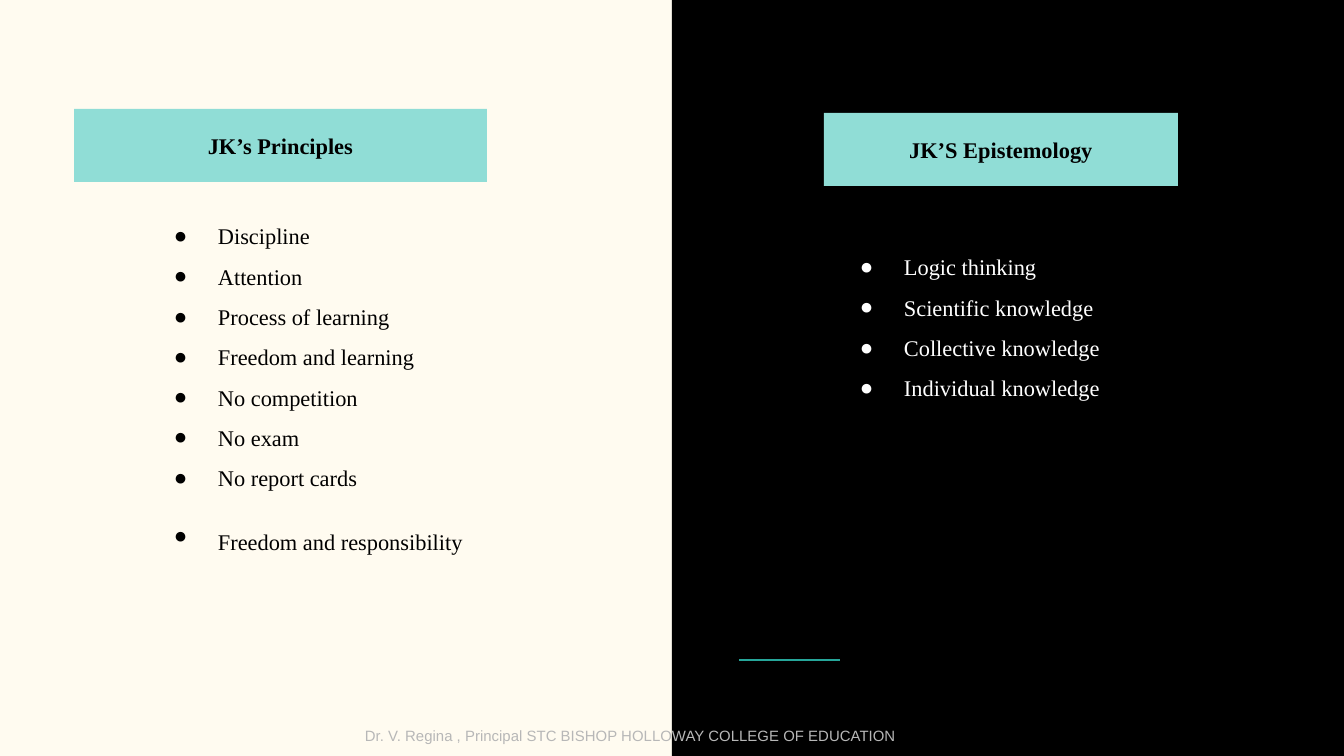
import pptx
import pptx.util
import pptx.dml.color
import pptx.enum.shapes
import pptx.enum.text
import pptx.oxml
import pptx.oxml.ns

PX = 914400 / 134.4
COLORS = {
    "cream": "FFFBF0",
    "black": "000000",
    "white": "FFFFFF",
    "mint": "90DDD6",
    "teal": "26A69A",
    "grey": "B7B7B7",
}
SERIF = "Times New Roman"
RECT = pptx.enum.shapes.MSO_SHAPE.RECTANGLE
ALIGN = pptx.enum.text.PP_ALIGN
ANCHOR = pptx.enum.text.MSO_ANCHOR


def px(*lengths):
    return [pptx.util.Emu(round(n * PX)) for n in lengths]


def add_text(p, text, size=12, font=SERIF, color="black", bold=False,
             align=None, bullet=False):
    r = p.add_run()
    r.text = text
    r.font.size = pptx.util.Pt(size)
    r.font.name = font
    r.font.bold = bold
    r.font.color.rgb = pptx.dml.color.RGBColor.from_string(COLORS[color])
    if align is not None:
        p.alignment = align
    if bullet:
        p.line_spacing = 1.5
        pPr = p._p.get_or_add_pPr()
        pPr.set("marL", str(px(67)[0]))
        pPr.set("indent", str(px(-44)[0]))
        ns = pptx.oxml.ns.nsdecls("a")
        for xml in (
            f'<a:buClr {ns}><a:srgbClr val="{COLORS[color]}"/></a:buClr>',
            f'<a:buFont {ns} typeface="{SERIF}"/>',
            f'<a:buChar {ns} char="●"/>',
        ):
            pPr.append(pptx.oxml.parse_xml(xml))


prs = pptx.Presentation()
prs.slide_width, prs.slide_height = px(1344, 756)
s = prs.slides.add_slide(prs.slide_layouts[6])

# Background
s.background.fill.solid()
s.background.fill.fore_color.rgb = pptx.dml.color.RGBColor.from_string(COLORS["cream"])

# Right panel and heading bars
for box, fill, heading in [
    ((672, 0, 672, 756), "black", None),
    ((824, 113, 354, 73), "mint", "JK’S Epistemology"),
    ((74, 109, 413, 73), "mint", "JK’s Principles"),
]:
    sp = s.shapes.add_shape(RECT, *px(*box))
    sp.shadow.inherit = False
    sp.fill.solid()
    sp.fill.fore_color.rgb = pptx.dml.color.RGBColor.from_string(COLORS[fill])
    sp.line.fill.background()
    if heading:
        sp.text_frame.vertical_anchor = ANCHOR.MIDDLE
        add_text(sp.text_frame.paragraphs[0], heading, bold=True, align=ALIGN.CENTER)

# Accent line
x1, y1, x2, y2 = px(739, 660, 840, 660)
line = s.shapes.add_connector(pptx.enum.shapes.MSO_CONNECTOR.STRAIGHT, x1, y1, x2, y2)
line.line.color.rgb = pptx.dml.color.RGBColor.from_string(COLORS["teal"])
line.line.width = pptx.util.Pt(1.5)
line._element.spPr.append(
    pptx.oxml.parse_xml(f'<a:effectLst {pptx.oxml.ns.nsdecls("a")}/>'))

# Bulleted lists and footer
principles = ["Discipline", "Attention", "Process of learning",
              "Freedom and learning", "No competition", "No exam",
              "No report cards", "Freedom and responsibility"]
epistemology = ["Logic thinking", "Scientific knowledge",
                "Collective knowledge", "Individual knowledge"]
footer = ["Dr. V. Regina , Principal STC BISHOP HOLLOWAY COLLEGE OF EDUCATION"]

for box, items, style in [
    ((824, 227, 423, 215), epistemology, {"color": "white", "bullet": True}),
    ((138, 196, 441, 441), principles, {"bullet": True}),
    ((352, 718, 732, 38), footer, {"size": 8, "font": "Arial", "color": "grey"}),
]:
    tf = s.shapes.add_textbox(*px(*box)).text_frame
    tf.word_wrap = True
    tf.margin_left, tf.margin_top, tf.margin_right, tf.margin_bottom = px(13, 13, 13, 13)
    for i, item in enumerate(items):
        p = tf.add_paragraph() if i else tf.paragraphs[0]
        add_text(p, item, **style)
    if items is principles:
        # The larger closing space makes the last line taller
        add_text(p, " ", size=20, font="Roboto")

prs.save("out.pptx")
